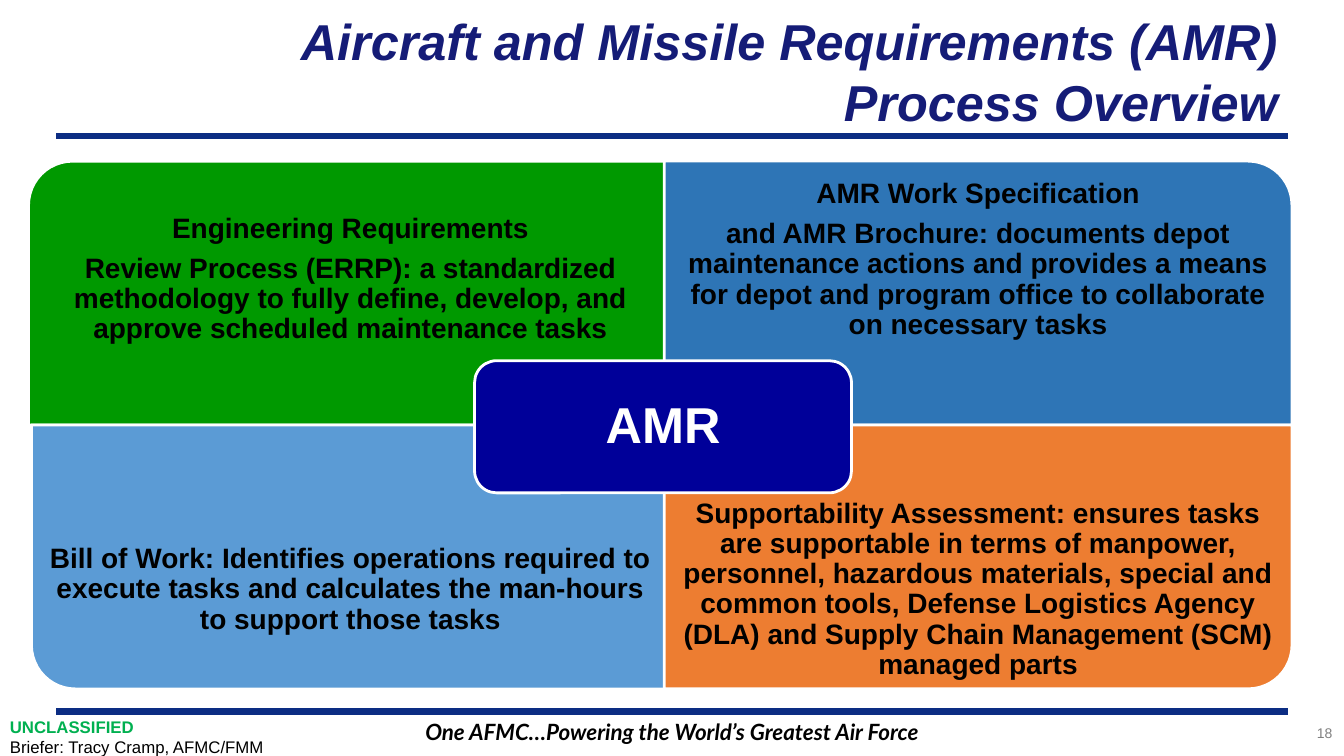
from dataclasses import dataclass

from lxml.etree import SubElement
from pptx import Presentation
from pptx.dml.color import RGBColor
from pptx.enum.shapes import MSO_CONNECTOR, MSO_SHAPE
from pptx.enum.text import MSO_ANCHOR, PP_ALIGN
from pptx.oxml.ns import qn
from pptx.shapes.autoshape import Shape
from pptx.slide import Slide
from pptx.util import Cm, Pt

COLORS = {
    "rule": "0C2D83",
    "title": "151C77",
    "page": "808080",
    "engineering": "009900",
    "specification": "2E75B6",
    "bill": "5B9BD5",
    "supportability": "ED7D31",
    "hub": "000099",
    "marking": "00B050",
    "black": "000000",
    "white": "FFFFFF",
}
QUADRANT_HEIGHT = 6.65
QUADRANT_TEXT_HEIGHT = 4.98
TOP_ROW = 4.06
BOTTOM_ROW = TOP_ROW + QUADRANT_HEIGHT


@dataclass(frozen=True)
class Box:
    left: float
    top: float
    width: float
    height: float


@dataclass(frozen=True)
class Style:
    size: float
    color: str = "black"
    bold: bool = False
    italic: bool = False
    font: str = "Arial"


@dataclass(frozen=True)
class Quadrant:
    box: Box
    text_top: float
    rotation: int
    color: str
    lines: tuple[str, ...]


@dataclass(frozen=True)
class Label:
    box: Box
    lines: tuple[tuple[str, Style], ...]
    align: PP_ALIGN = PP_ALIGN.LEFT
    anchor: MSO_ANCHOR = MSO_ANCHOR.TOP


BODY = Style(20, bold=True)

QUADRANTS = (
    Quadrant(Box(0.72, TOP_ROW, 16.23, QUADRANT_HEIGHT), TOP_ROW + 0.49, 270, "engineering", (
        "Engineering Requirements",
        "Review Process (ERRP): a standardized methodology to fully define, develop, "
        "and approve scheduled maintenance tasks",
    )),
    Quadrant(Box(16.74, TOP_ROW, 15.82, QUADRANT_HEIGHT), TOP_ROW, 0, "specification", (
        "AMR Work Specification",
        "and AMR Brochure: documents depot maintenance actions and provides a means "
        "for depot and program office to collaborate on necessary tasks",
    )),
    Quadrant(Box(0.79, BOTTOM_ROW, 16.08, QUADRANT_HEIGHT), BOTTOM_ROW + 1.66, 180, "bill", (
        "Bill of Work: Identifies operations required to execute tasks and calculates "
        "the man-hours to support those tasks",
    )),
    Quadrant(Box(16.74, BOTTOM_ROW, 15.82, QUADRANT_HEIGHT), BOTTOM_ROW + 1.66, 90, "supportability", (
        "Supportability Assessment: ensures tasks are supportable in terms of manpower, "
        "personnel, hazardous materials, special and common tools, Defense Logistics "
        "Agency (DLA) and Supply Chain Management (SCM) managed parts",
    )),
)

LABELS = (
    Label(Box(1.42, 17.98, 31.04, 0.94),
          (("One AFMC…Powering the World’s Greatest Air Force",
            Style(16, bold=True, italic=True, font="Lato")),), PP_ALIGN.CENTER),
    Label(Box(5.99, 0.2, 26.47, 3.18),
          (("Aircraft and Missile Requirements (AMR) Process Overview",
            Style(36, "title", True, True)),), PP_ALIGN.RIGHT, MSO_ANCHOR.MIDDLE),
    Label(Box(29.59, 18.14, 4.24, 0.84), (("18", Style(10, "page")),), PP_ALIGN.RIGHT),
    Label(Box(0, 17.93, 8.97, 1.27),
          (("UNCLASSIFIED", Style(12, "marking", True)),
           ("Briefer: Tracy Cramp, AFMC/FMM", Style(12)))),
)


def rgb(name: str) -> RGBColor:
    return RGBColor.from_string(COLORS[name])


def write_text(shape: Shape, label: Label, inset: float | None = None,
               line_spacing: float = 1.0, space_after: float = 0) -> None:
    frame = shape.text_frame
    frame.word_wrap = True
    frame.vertical_anchor = label.anchor
    if inset is not None:
        frame.margin_left = frame.margin_right = Cm(inset)
        frame.margin_top = frame.margin_bottom = Cm(inset)
    for index, (text, style) in enumerate(label.lines):
        paragraph = frame.add_paragraph() if index else frame.paragraphs[0]
        paragraph.alignment = label.align
        paragraph.line_spacing = line_spacing
        paragraph.space_after = Pt(space_after)
        run = paragraph.add_run()
        run.text = text
        run.font.name = style.font
        run.font.size = Pt(style.size)
        run.font.bold = style.bold
        run.font.italic = style.italic
        run.font.color.rgb = rgb(style.color)


def add_text_box(slide: Slide, box: Box) -> Shape:
    return slide.shapes.add_textbox(Cm(box.left), Cm(box.top), Cm(box.width), Cm(box.height))


def add_panel(slide: Slide, kind: MSO_SHAPE, box: Box, color: str, rotation: int = 0) -> Shape:
    width, height = box.width, box.height
    if rotation % 180:
        width, height = height, width
    left = box.left + (box.width - width) / 2
    top = box.top + (box.height - height) / 2
    panel = slide.shapes.add_shape(kind, Cm(left), Cm(top), Cm(width), Cm(height))
    panel.rotation = rotation
    panel.shadow.inherit = False
    panel.fill.solid()
    panel.fill.fore_color.rgb = rgb(color)
    panel.line.color.rgb = rgb("white")
    panel.line.width = Pt(2)
    return panel


def add_rule(slide: Slide, height: float) -> None:
    rule = slide.shapes.add_connector(
        MSO_CONNECTOR.STRAIGHT, Cm(1.42), Cm(height), Cm(32.46), Cm(height))
    rule.line.color.rgb = rgb("rule")
    rule.line.width = Pt(4.5)
    SubElement(rule._element.spPr, qn("a:effectLst"))


def add_quadrant(slide: Slide, quadrant: Quadrant) -> None:
    box = quadrant.box
    add_panel(slide, MSO_SHAPE.ROUND_1_RECTANGLE, box, quadrant.color, quadrant.rotation)
    text_box = Box(box.left, quadrant.text_top, box.width, QUADRANT_TEXT_HEIGHT)
    lines = tuple((line, BODY) for line in quadrant.lines)
    label = Label(text_box, lines, PP_ALIGN.CENTER, MSO_ANCHOR.MIDDLE)
    write_text(add_text_box(slide, text_box), label, 0.4, 0.9, 7)


def main() -> None:
    presentation = Presentation()
    presentation.slide_width = Cm(33.87)
    presentation.slide_height = Cm(19.05)
    slide = presentation.slides.add_slide(presentation.slide_layouts[6])
    for height in (17.93, 3.43):
        add_rule(slide, height)
    for label in LABELS:
        write_text(add_text_box(slide, label.box), label)
    for quadrant in QUADRANTS:
        add_quadrant(slide, quadrant)
    hub = Label(Box(11.96, 9.09, 9.5, 3.33), (("AMR", Style(36, "white", True)),),
                PP_ALIGN.CENTER, MSO_ANCHOR.MIDDLE)
    hub_panel = add_panel(slide, MSO_SHAPE.ROUNDED_RECTANGLE, hub.box, hub.color if hasattr(hub, "color") else "hub")
    write_text(hub_panel, hub, 0.38, 0.9)
    presentation.save("out.pptx")


if __name__ == "__main__":
    main()
